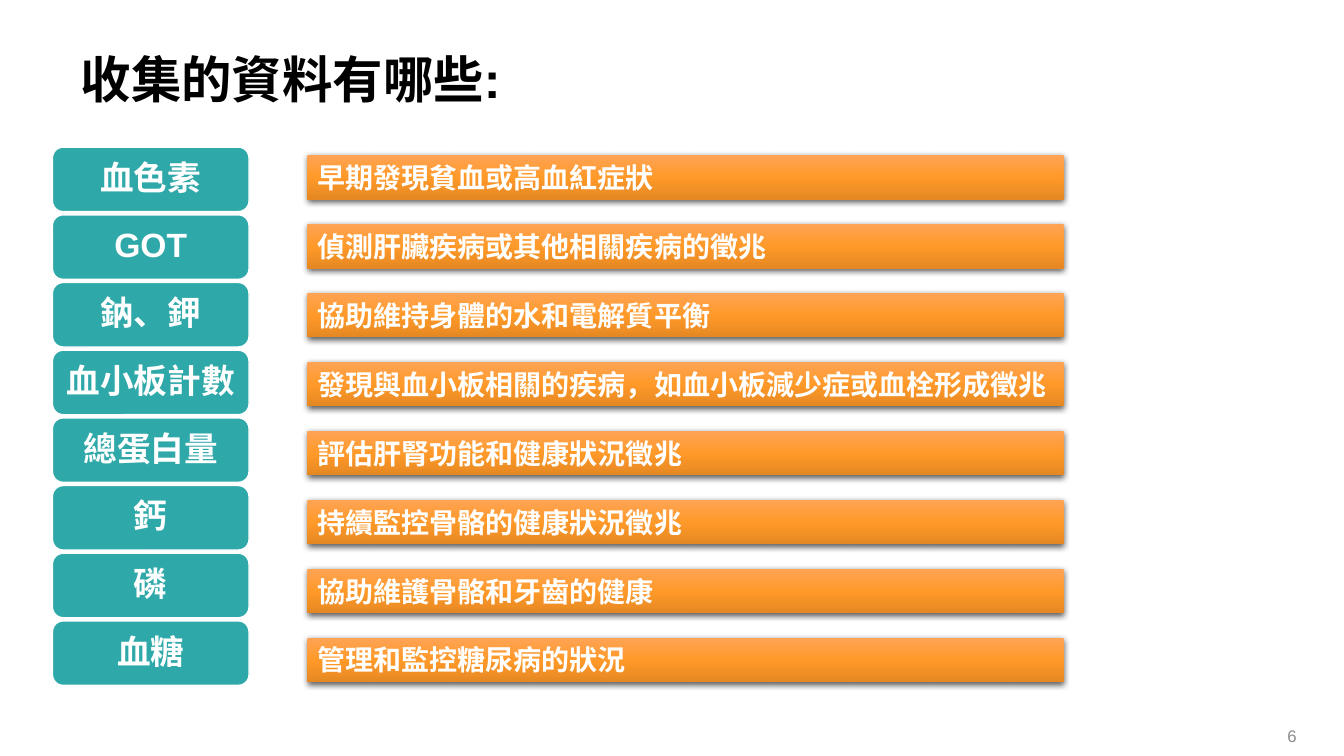
from dataclasses import dataclass

from pptx import Presentation
from pptx.dml.color import RGBColor
from pptx.enum.shapes import MSO_SHAPE
from pptx.enum.text import MSO_ANCHOR, MSO_AUTO_SIZE, PP_ALIGN
from pptx.oxml import parse_xml
from pptx.oxml.ns import nsdecls
from pptx.util import Inches, Pt

ROUNDED, RECTANGLE = MSO_SHAPE.ROUNDED_RECTANGLE, MSO_SHAPE.RECTANGLE
TOP, MIDDLE = MSO_ANCHOR.TOP, MSO_ANCHOR.MIDDLE
LEFT, CENTER, RIGHT = PP_ALIGN.LEFT, PP_ALIGN.CENTER, PP_ALIGN.RIGHT
GROW = MSO_AUTO_SIZE.SHAPE_TO_FIT_TEXT


@dataclass(frozen=True)
class Theme:
    font: str = "Arial"
    black: str = "000000"
    white: str = "FFFFFF"
    gray: str = "8C8C8C"
    teal: str = "2EA8A8"
    orange: tuple = ((0, "FFA455"), (50, "FF9929"), (100, "E58822"))
    title_size: int = 36
    label_size: int = 24
    purpose_size: int = 20
    number_size: int = 12


THEME = Theme()


def write_text(shape, text, size, color=THEME.white, bold=True, align=LEFT, anchor=MIDDLE):
    frame = shape.text_frame
    frame.word_wrap = True
    frame.vertical_anchor = anchor
    paragraph = frame.paragraphs[0]
    paragraph.alignment = align
    run = paragraph.add_run()
    run.text = text
    run.font.name = THEME.font
    run.font.size = Pt(size)
    run.font.bold = bold
    run.font.color.rgb = RGBColor.from_string(color)
    return paragraph


def add_gradient_and_shadow(shape, stops):
    properties = shape._element.spPr
    stop_xml = "".join(
        f'<a:gs pos="{percent * 1000}"><a:srgbClr val="{color}"/></a:gs>'
        for percent, color in stops
    )
    properties.insert(2, parse_xml(
        f'<a:gradFill {nsdecls("a")} rotWithShape="1"><a:gsLst>{stop_xml}</a:gsLst>'
        '<a:lin ang="5400000" scaled="0"/></a:gradFill>'
    ))
    properties.append(parse_xml(
        f'<a:effectLst {nsdecls("a")}><a:outerShdw blurRad="{Pt(4.5)}" dist="{Pt(1.5)}" '
        f'dir="5400000" rotWithShape="0"><a:srgbClr val="{THEME.black}">'
        '<a:alpha val="63000"/></a:srgbClr></a:outerShdw></a:effectLst>'
    ))


presentation = Presentation()
presentation.slide_width = Inches(13.33)
presentation.slide_height = Inches(7.5)
slide = presentation.slides.add_slide(presentation.slide_layouts[5])

# Title
title = slide.shapes.title
title.left, title.top = Inches(0.7), Inches(0.4)
title.width, title.height = Inches(12.27), Inches(0.76)
write_text(title, "收集的資料有哪些:", THEME.title_size, color=THEME.black)

# Blood tests and what each one is for
tests = [
    ("血色素", "早期發現貧血或高血紅症狀"),
    ("GOT", "偵測肝臟疾病或其他相關疾病的徵兆"),
    ("鈉、鉀", "協助維持身體的水和電解質平衡"),
    ("血小板計數", "發現與血小板相關的疾病，如血小板減少症或血栓形成徵兆"),
    ("總蛋白量", "評估肝腎功能和健康狀況徵兆"),
    ("鈣", "持續監控骨骼的健康狀況徵兆"),
    ("磷", "協助維護骨骼和牙齒的健康"),
    ("血糖", "管理和監控糖尿病的狀況"),
]
label_pitch = 4.7 / (len(tests) - 1)
purpose_pitch = 4.79 / (len(tests) - 1)

for row, (test, purpose) in enumerate(tests):
    # Teal label
    label = slide.shapes.add_shape(
        ROUNDED, Inches(0.52), Inches(1.46 + row * label_pitch), Inches(1.95), Inches(0.64)
    )
    label.shadow.inherit = False
    label.fill.solid()
    label.fill.fore_color.rgb = RGBColor.from_string(THEME.teal)
    label.line.color.rgb = RGBColor.from_string(THEME.white)
    label.line.width = Pt(1)
    label.text_frame.margin_left = label.text_frame.margin_right = Inches(0.08)
    paragraph = write_text(label, test, THEME.label_size, align=CENTER)
    paragraph.line_spacing = 0.9

    # Orange bar
    bar = slide.shapes.add_shape(
        RECTANGLE, Inches(3.05), Inches(1.54 + row * purpose_pitch), Inches(7.5), Inches(0.44)
    )
    bar.line.fill.background()
    add_gradient_and_shadow(bar, THEME.orange)
    write_text(bar, purpose, THEME.purpose_size, anchor=TOP)
    bar.text_frame.auto_size = GROW

# Slide number
number = slide.shapes.add_textbox(Inches(11.6), Inches(7.1), Inches(1.36), Inches(0.4))
write_text(number, "6", THEME.number_size, color=THEME.gray, bold=False, align=RIGHT)

presentation.save("out.pptx")
